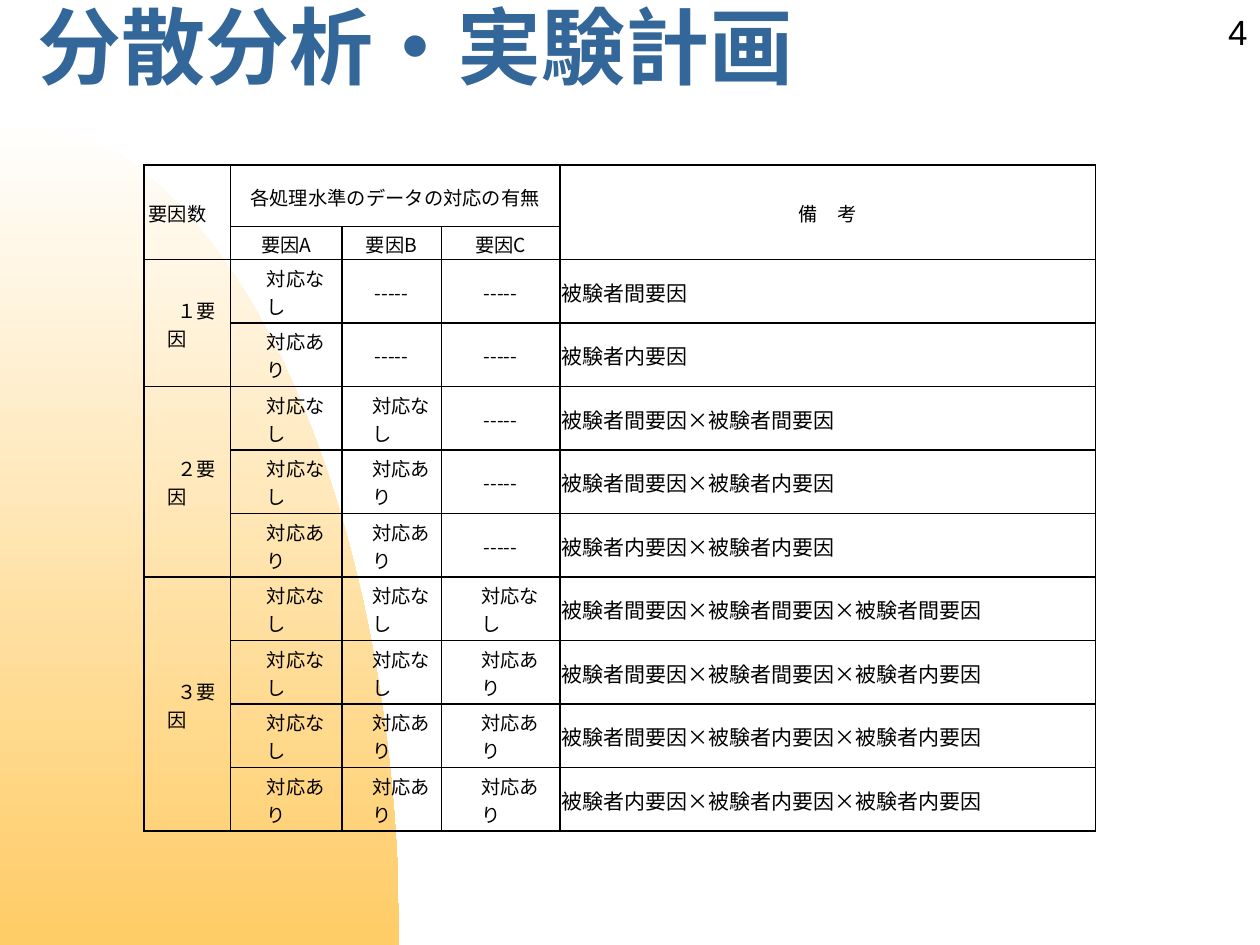
from lxml import etree
from pptx import Presentation
from pptx import util as u
from pptx.dml.color import RGBColor
from pptx.enum import text
from pptx.oxml import ns

BLACK = RGBColor(0x00, 0x00, 0x00)
WHITE = RGBColor(0xFF, 0xFF, 0xFF)
BLUE = RGBColor(0x33, 0x66, 0x99)
ORANGE = RGBColor(0xFF, 0xCC, 0x66)

TITLE_FONT = "Arial"
TABLE_FONT = "Noto Sans CJK JP"
COL_WIDTHS = (1.75, 2.24, 2.01, 2.39, 10.8)
ROW_HEIGHTS = (1.24, 0.66) + (1.28,) * 9
NO_FACTOR = "-----"
SUBJECT_FACTOR = {"なし": "被験者間要因", "あり": "被験者内要因"}
DESIGNS = {
    "１要因": [("なし",), ("あり",)],
    "２要因": [("なし", "なし"), ("なし", "あり"), ("あり", "あり")],
    "３要因": [
        ("なし", "なし", "なし"),
        ("なし", "なし", "あり"),
        ("なし", "あり", "あり"),
        ("あり", "あり", "あり"),
    ],
}


def add_run(p, words, font, size, color, bold=False):
    """Add one formatted run for Latin and Japanese text."""
    r = p.add_run()
    r.text = words
    r.font.name = font
    r.font.size = u.Pt(size)
    r.font.bold = bold
    r.font.color.rgb = color
    ea = etree.SubElement(r.font._element, ns.qn("a:ea"))
    ea.set("typeface", font)


def add_label(s, box, words, size, color, bold=False, wrap=True,
              align=text.PP_ALIGN.LEFT, spacing=1.0):
    """Add a one-line text box, centred vertically in its box."""
    tf = s.shapes.add_textbox(*(u.Cm(v) for v in box)).text_frame
    tf.word_wrap = wrap
    tf.vertical_anchor = text.MSO_ANCHOR.MIDDLE
    p = tf.paragraphs[0]
    p.alignment = align
    p.line_spacing = spacing
    add_run(p, words, TITLE_FONT, size, color, bold)


def add_backdrop(s, box, steps=60):
    """Draw the curved corner with its vertical gradient."""
    left, top, width, height = box
    points = []
    for i in range(1, steps + 1):
        t = i / steps
        x = 3 * t * (1 - t) ** 2 * 0.55 + 3 * t ** 2 * (1 - t) + t ** 3
        y = 3 * t ** 2 * (1 - t) * 0.45 + t ** 3
        points.append((u.Cm(left + width * x), u.Cm(top + height * y)))
    points.append((u.Cm(left), u.Cm(top + height)))
    builder = s.shapes.build_freeform(u.Cm(left), u.Cm(top))
    builder.add_line_segments(points, close=True)
    sp = builder.convert_to_shape()
    sp.shadow.inherit = False
    sp.line.fill.background()
    sp.fill.gradient()
    sp.fill.gradient_angle = 270
    for stop, color in zip(sp.fill.gradient_stops, (WHITE, ORANGE)):
        stop.color.rgb = color


def format_cell(cell):
    """Give a cell thin black borders, no fill and tight margins."""
    tc_pr = cell._tc.get_or_add_tcPr()
    for side in ("lnL", "lnR", "lnT", "lnB"):
        ln = etree.SubElement(tc_pr, ns.qn(f"a:{side}"), w=str(u.Pt(1)))
        fill = etree.SubElement(ln, ns.qn("a:solidFill"))
        etree.SubElement(fill, ns.qn("a:srgbClr"), val=str(BLACK))
    cell.fill.background()
    cell.vertical_anchor = text.MSO_ANCHOR.MIDDLE
    cell.margin_left = cell.margin_right = cell.margin_top = u.Cm(0.03)
    cell.margin_bottom = 0


def write_cell(cell, words, size=11, align=text.PP_ALIGN.CENTER):
    """Write one paragraph into a table cell."""
    p = cell.text_frame.paragraphs[0]
    p.alignment = align
    add_run(p, words, TABLE_FONT, size, BLACK)


def add_design_table(s, left, top):
    """Add the table of factor counts, data pairing and remarks."""
    frame = s.shapes.add_table(
        len(ROW_HEIGHTS), len(COL_WIDTHS), u.Cm(left), u.Cm(top),
        u.Cm(sum(COL_WIDTHS)), u.Cm(sum(ROW_HEIGHTS)))
    table = frame.table
    table.first_row = table.horz_banding = False
    for col, width in zip(table.columns, COL_WIDTHS):
        col.width = u.Cm(width)
    for row, height in zip(table.rows, ROW_HEIGHTS):
        row.height = u.Cm(height)
    for cell in table.iter_cells():
        format_cell(cell)

    table.cell(0, 0).merge(table.cell(1, 0))
    table.cell(0, 1).merge(table.cell(0, 3))
    table.cell(0, 4).merge(table.cell(1, 4))
    write_cell(table.cell(0, 0), "要因数　")
    write_cell(table.cell(0, 1), "各処理水準のデータの対応の有無")
    write_cell(table.cell(0, 4), "備　考")
    for c, factor in enumerate("ABC", 1):
        write_cell(table.cell(1, c), f"要因{factor}")

    row = 2
    for count, designs in DESIGNS.items():
        table.cell(row, 0).merge(table.cell(row + len(designs) - 1, 0))
        write_cell(table.cell(row, 0), f"　{count}　")
        for pairing in designs:
            states = [f"　対応{state}　" for state in pairing]
            states += [NO_FACTOR] * (3 - len(states))
            for c, state in enumerate(states, 1):
                write_cell(table.cell(row, c), state)
            remark = "×".join(SUBJECT_FACTOR[state] for state in pairing)
            write_cell(table.cell(row, 4), remark, 12, text.PP_ALIGN.LEFT)
            row += 1


def main():
    """Build the slide and save it."""
    prs = Presentation()
    prs.slide_width, prs.slide_height = u.Cm(25.4), u.Cm(19.05)
    s = prs.slides.add_slide(prs.slide_layouts[6])
    add_backdrop(s, (0, 2.34, 8.05, 16.71))
    add_label(s, (0.5, 0, 24, 2.3), "分散分析・実験計画", 48, BLUE,
              bold=True, spacing=0.7)
    add_design_table(s, 2.9, 3.33)
    add_label(s, (23.14, 0, 2.26, 1.27), "4", 20, BLACK,
              wrap=False, align=text.PP_ALIGN.RIGHT)
    prs.save("out.pptx")


if __name__ == "__main__":
    main()
